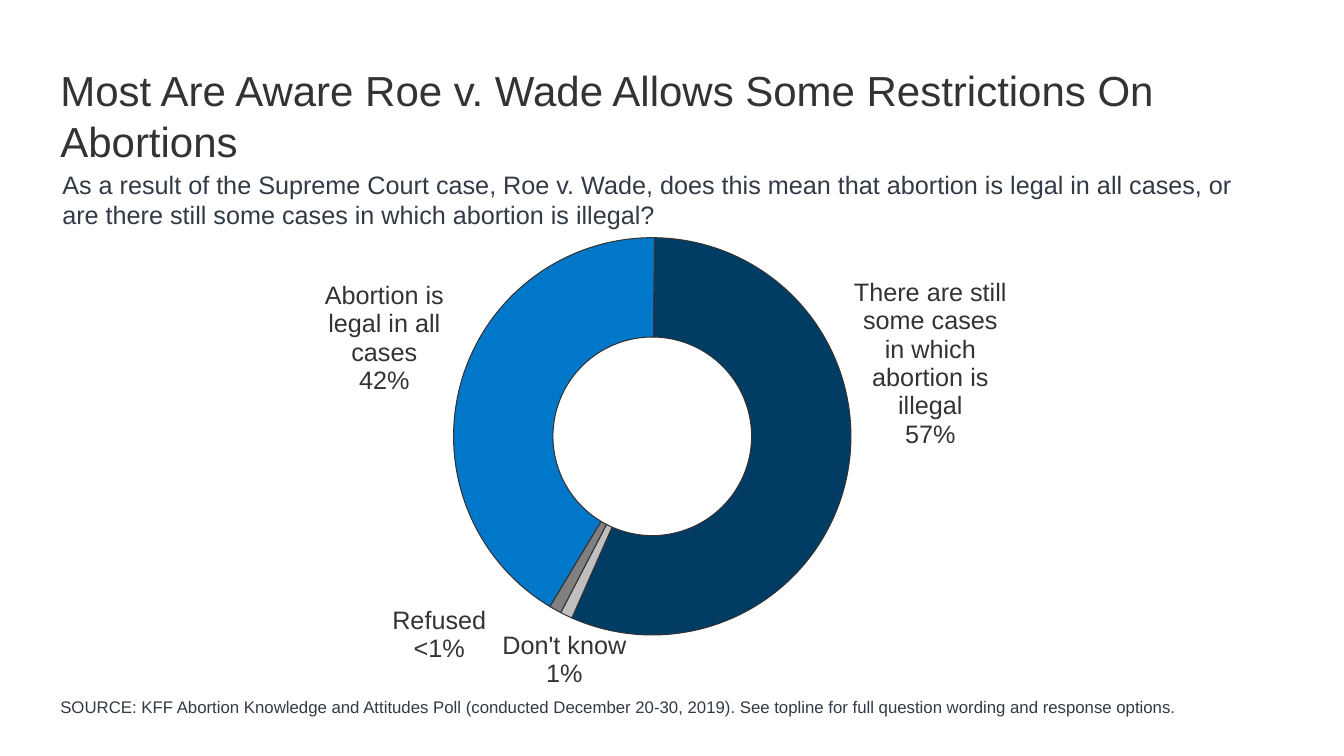
from lxml import etree
from pptx import Presentation
from pptx.chart.data import CategoryChartData
from pptx.dml.color import RGBColor
from pptx.enum.chart import XL_CHART_TYPE as ChartType
from pptx.enum.text import MSO_ANCHOR as Anchor, PP_ALIGN as Align
from pptx.oxml.ns import qn
from pptx.util import Cm, Pt

INCH = 2.54
DARK, SLATE = "333333", "323A45"
TITLE = "Most Are Aware Roe v. Wade Allows Some Restrictions On Abortions"
QUESTION = ("As a result of the Supreme Court case, Roe v. Wade, does this mean that "
            "abortion is legal in all cases, or are there still some cases in which "
            "abortion is illegal?")
SOURCE = ("SOURCE: KFF Abortion Knowledge and Attitudes Poll (conducted December 20-30, "
          "2019). See topline for full question wording and response options.")
ANSWERS = [
    ("Abortion is legal in all cases", 0.42, "0077C8", (-0.16, -0.11)),
    ("There are still some cases in which abortion is illegal", 0.57, "003C64", (0.17, -0.2)),
    ("Don't know", 0.01, "BFBFBF", (-0.03, 0.17)),
    ("Refused", 0.01, "808080", (-0.18, 0.13)),
]
REFUSED = 3


def color(value):
    return RGBColor.from_string(value)


def inches(*values):
    return [Cm(round(value * INCH, 2)) for value in values]


def style_font(font, size, tone):
    font.name = "Arial"
    font.size = Pt(size)
    font.color.rgb = color(tone)


def fill_text(box, text, size, tone, inset_top):
    frame = box.text_frame
    frame.text = text
    frame.word_wrap = True
    frame.vertical_anchor = Anchor.TOP
    frame.margin_left, frame.margin_top = inches(0.1, inset_top)
    para = frame.paragraphs[0]
    para.alignment = Align.LEFT
    for span in para.runs:
        style_font(span.font, size, tone)


def add_text(page, place, text, size, inset_top):
    box = page.shapes.add_textbox(*inches(*place))
    fill_text(box, text, size, SLATE, inset_top)


def add_title(page):
    box = page.shapes.title
    box.left, box.top, box.width, box.height = inches(0.5, 0.55, 12.33, 0.92)
    fill_text(box, TITLE, 30, DARK, 0.09)


def manual_layout(**settings):
    layout = etree.Element(qn("c:layout"))
    manual = etree.SubElement(layout, qn("c:manualLayout"))
    for name, value in settings.items():
        etree.SubElement(manual, qn("c:" + name)).set("val", str(value))
    return layout


def place_plot(chart):
    area = chart._chartSpace.chart.plotArea
    for layout in area.findall(qn("c:layout")):
        area.remove(layout)
    area.insert(0, manual_layout(layoutTarget="inner", xMode="edge", yMode="edge",
                                 x=0.22, y=0.07, w=0.51, h=0.77))


def label_refused(label):
    frame = label.text_frame
    frame.text = "Refused\n<1%"
    for para in frame.paragraphs:
        for span in para.runs:
            style_font(span.font, 18, DARK)


def add_labels(series):
    labels = series.data_labels
    labels.show_value = True
    labels.show_category_name = True
    labels.number_format = "0%"
    labels.number_format_is_linked = False
    style_font(labels.font, 18, DARK)
    for leader in series._element.iter(qn("c:showLeaderLines")):
        leader.set("val", "0")
    for index in range(len(ANSWERS)):
        label = series.points[index].data_label
        if index == REFUSED:
            label_refused(label)
        else:
            style_font(label.font, 18, DARK)
    for answer, item in zip(ANSWERS, series._element.xpath("c:dLbls/c:dLbl")):
        x, y = answer[3]
        item.insert(1, manual_layout(x=x, y=y))
        item.find(qn("c:showCatName")).set("val", "1")
        etree.SubElement(item, qn("c:separator")).text = "\n"


def add_doughnut(page):
    data = CategoryChartData(number_format="0%")
    data.categories = [answer[0] for answer in ANSWERS]
    data.add_series("Series 1", [answer[1] for answer in ANSWERS])
    place = inches(2.8, 1.97, 7.73, 5.19)
    chart = page.shapes.add_chart(ChartType.DOUGHNUT, *place, data).chart
    chart.has_legend = False
    chart.has_title = False
    style_font(chart.font, 10, DARK)
    place_plot(chart)
    plot = chart.plots[0]
    plot.vary_by_categories = True
    plot._element.find(qn("c:firstSliceAng")).set("val", "211")
    plot._element.find(qn("c:holeSize")).set("val", "49")
    series = plot.series[0]
    for index, answer in enumerate(ANSWERS):
        look = series.points[index].format
        look.fill.solid()
        look.fill.fore_color.rgb = color(answer[2])
        look.line.color.rgb = color(DARK)
        look.line.width = Pt(0.75)
    add_labels(series)


def main():
    deck = Presentation()
    deck.slide_width, deck.slide_height = inches(13.33, 7.5)
    page = deck.slides.add_slide(deck.slide_layouts[5])
    add_doughnut(page)
    add_title(page)
    add_text(page, (0.5, 6.84, 11.4, 0.44), SOURCE, 12, 0.07)
    add_text(page, (0.52, 1.62, 12.17, 0.71), QUESTION, 18, 0.06)
    deck.save("out.pptx")


if __name__ == "__main__":
    main()
